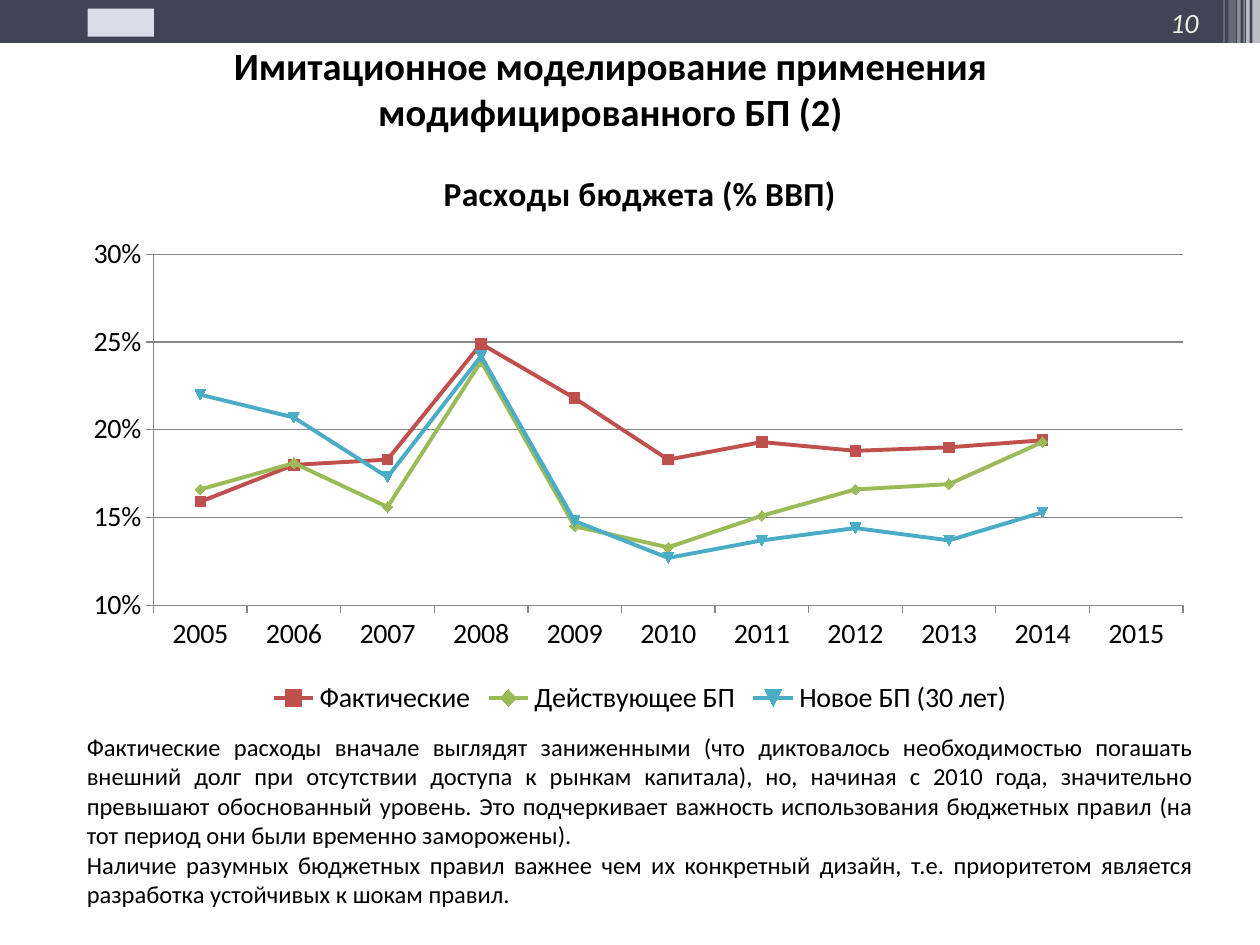
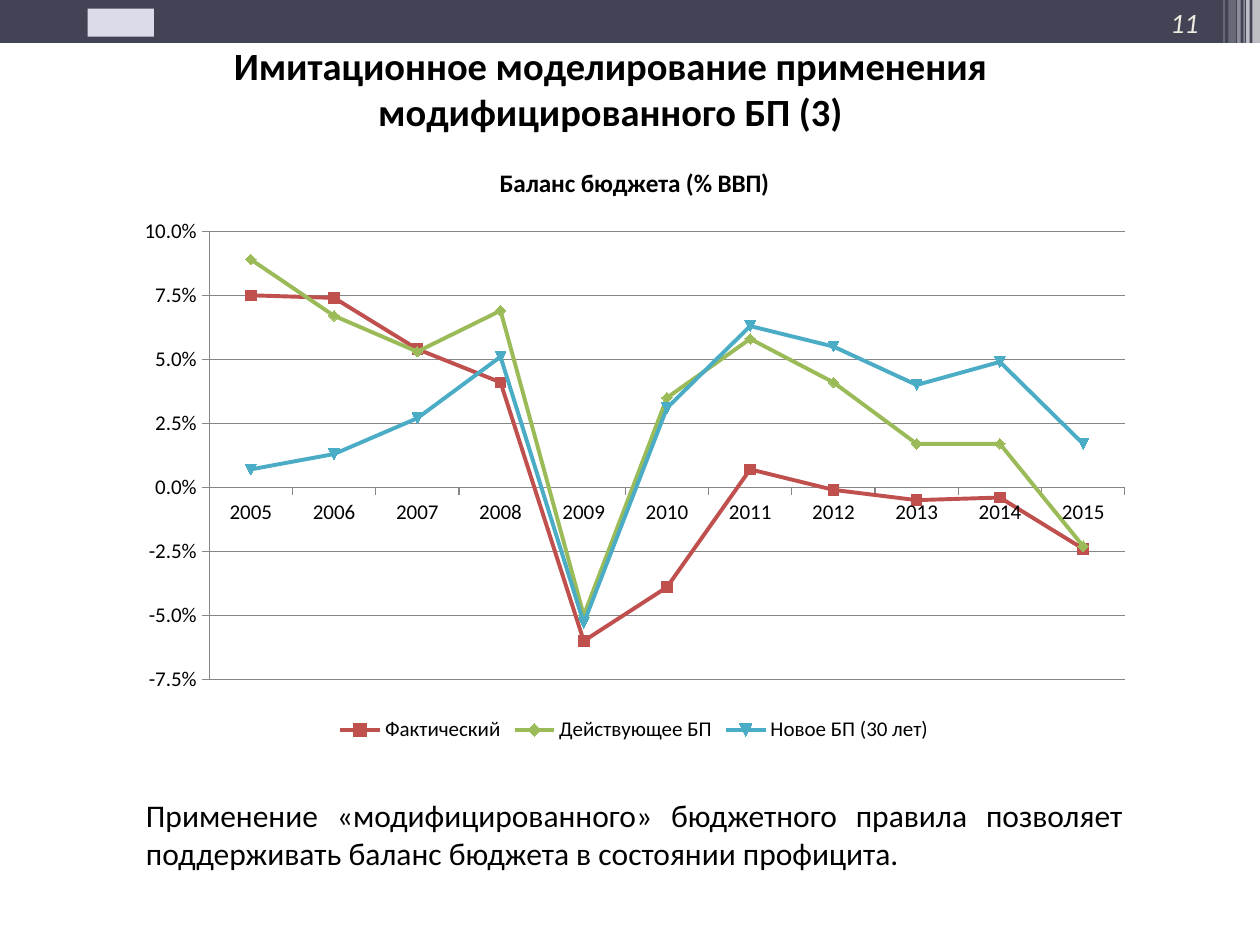
from lxml import etree
from pptx import Presentation
from pptx.chart.data import CategoryChartData
from pptx.dml.color import RGBColor
from pptx.enum import chart as ch, shapes, text
from pptx.oxml import parse_xml
from pptx.oxml.ns import nsdecls, qn
from pptx.util import Pt

# Colours and font
BAND = RGBColor(0x42, 0x44, 0x56)
WHITE = RGBColor(0xFF, 0xFF, 0xFF)
EMBLEM = RGBColor(0xDB, 0xDB, 0xE9)
NUMBER = RGBColor(0xEE, 0xEC, 0xE1)
BLACK = RGBColor(0, 0, 0)
GREY = RGBColor(0x86, 0x86, 0x86)
RED = RGBColor(0xC0, 0x50, 0x4D)
GREEN = RGBColor(0x9B, 0xBB, 0x59)
BLUE = RGBColor(0x4B, 0xAC, 0xC6)
SERIES_COLOURS = (RED, GREEN, BLUE)
FONT = "Calibri"

# Content
TITLE = "Имитационное моделирование применения модифицированного БП ({})"
YEARS = [str(year) for year in range(2005, 2016)]
SLIDES = [
    {
        "number": 10, "part": 2,
        "chart": {
            "title": "Расходы бюджета (% ВВП)", "size": 16,
            "box": (42.5, 82.8, 646.5, 329), "plot": (0.07, 0.19, 0.91, 0.61),
            "scale": (0.1, 0.3, 0.05), "format": "0%",
            "series": {
                "Фактические": (0.159, 0.18, 0.183, 0.249, 0.218, 0.183,
                                0.193, 0.188, 0.19, 0.194, None),
                "Действующее БП": (0.166, 0.181, 0.156, 0.239, 0.145, 0.133,
                                   0.151, 0.166, 0.169, 0.193, None),
                "Новое БП (30 лет)": (0.22, 0.207, 0.173, 0.242, 0.148, 0.127,
                                      0.137, 0.144, 0.137, 0.153, None),
            },
        },
        "text_box": (42.5, 414.7, 646.5, 126), "text_size": 14,
        "text": [
            "Фактические расходы вначале выглядят заниженными (что диктовалось "
            "необходимостью погашать внешний долг при отсутствии доступа к рынкам "
            "капитала), но, начиная с 2010 года, значительно превышают обоснованный "
            "уровень. Это подчеркивает важность использования бюджетных правил (на "
            "тот период они были временно заморожены).",
            "Наличие разумных бюджетных правил важнее чем их конкретный дизайн, т.е. "
            "приоритетом является разработка устойчивых к шокам правил.",
        ],
    },
    {
        "number": 11, "part": 3,
        "chart": {
            "title": "Баланс бюджета (% ВВП)", "size": 12,
            "box": (70.5, 81.4, 584, 345.6), "plot": (0.084, 0.147, 0.896, 0.741),
            "scale": (-0.075, 0.1, 0.025), "format": "0.0%",
            "series": {
                "Фактический": (0.075, 0.074, 0.054, 0.041, -0.06, -0.039,
                                0.007, -0.001, -0.005, -0.004, -0.024),
                "Действующее БП": (0.089, 0.067, 0.053, 0.069, -0.05, 0.035,
                                   0.058, 0.041, 0.017, 0.017, -0.023),
                "Новое БП (30 лет)": (0.007, 0.013, 0.027, 0.051, -0.053, 0.031,
                                      0.063, 0.055, 0.04, 0.049, 0.017),
            },
        },
        "text_box": (76.3, 451.4, 572.4, 51), "text_size": 18,
        "text": ["Применение «модифицированного» бюджетного правила позволяет "
                 "поддерживать баланс бюджета в состоянии профицита."],
    },
]

# Shared frame: left, width, height, opacity in percent
STRIPES = [(715.7, 4.3, 49, 65), (712.1, 2, 49, 65), (710.6, 0.7, 49, 60),
           (707, 2, 49, 40), (702, 4.3, 46, 20), (699.1, 0.7, 46, 30)]
TITLE_BOX = (105.1, 20.2, 487.4, 60.5)
NUMBER_BOX = (524.2, -1.4, 167.8, 28.8)
EMBLEM_BOX = (50, 5, 38, 16)


def points(box):
    return [Pt(value) for value in box]


def add_block(page, box, colour, opacity=100):
    block = page.shapes.add_shape(shapes.MSO_SHAPE.RECTANGLE, *points(box))
    block.shadow.inherit = False
    block.fill.solid()
    block.fill.fore_color.rgb = colour
    block.line.fill.background()
    if opacity < 100:
        fill = block.fill._xPr.find(qn("a:solidFill"))
        etree.SubElement(fill[0], qn("a:alpha"), val=str(opacity * 1000))


def write(shape, lines, size, align, anchor, colour=BLACK, bold=False, italic=False):
    frame = shape.text_frame
    frame.word_wrap = True
    frame.auto_size = text.MSO_AUTO_SIZE.NONE
    frame.vertical_anchor = anchor
    frame.text = "\n".join(lines)
    for para in frame.paragraphs:
        para.alignment = align
        for span in para.runs:
            style_font(span.font, size, colour, bold)
            span.font.italic = italic


def style_font(font, size, colour=BLACK, bold=False):
    font.name, font.size, font.bold = FONT, Pt(size), bold
    font.color.rgb = colour


def add_frame(page, number, part):
    # Band, stripes, emblem, page number and title
    add_block(page, (0, 0, 720, 24.5), BAND)
    for left, width, height, opacity in STRIPES:
        add_block(page, (left, 0, width, height), WHITE, opacity)
    add_block(page, EMBLEM_BOX, EMBLEM)
    middle = text.MSO_ANCHOR.MIDDLE
    number_box = page.shapes.add_textbox(*points(NUMBER_BOX))
    write(number_box, [str(number)], 16, text.PP_ALIGN.RIGHT, middle, NUMBER, italic=True)
    title = page.shapes.title
    title.left, title.top, title.width, title.height = points(TITLE_BOX)
    write(title, [TITLE.format(part)], 22, text.PP_ALIGN.CENTER, middle, bold=True)


def fix_plot(chart, plot):
    # Fixed inner plot area as fractions of the chart
    x, y, width, height = plot
    layout = parse_xml(
        f'<c:layout {nsdecls("c")}><c:manualLayout><c:layoutTarget val="inner"/>'
        f'<c:xMode val="edge"/><c:yMode val="edge"/><c:x val="{x}"/><c:y val="{y}"/>'
        f'<c:w val="{width}"/><c:h val="{height}"/></c:manualLayout></c:layout>')
    area = chart._chartSpace.chart.plotArea
    for old in area.findall(qn("c:layout")):
        area.remove(old)
    area.insert(0, layout)


def add_line_chart(page, title, size, box, plot, scale, format, series):
    data = CategoryChartData(number_format=format)
    data.categories = YEARS
    for name, values in series.items():
        data.add_series(name, values)
    chart = page.shapes.add_chart(ch.XL_CHART_TYPE.LINE_MARKERS, *points(box), data).chart
    style_font(chart.font, size)
    chart.has_title = True
    chart.chart_title.text_frame.text = title
    style_font(chart.chart_title.text_frame.paragraphs[0].runs[0].font, size * 1.2, bold=True)
    chart.chart_title.include_in_layout = False
    chart.has_legend = True
    chart.legend.position = ch.XL_LEGEND_POSITION.BOTTOM
    chart.legend.include_in_layout = False
    fix_plot(chart, plot)

    # Axes
    values_axis = chart.value_axis
    values_axis.minimum_scale, values_axis.maximum_scale, values_axis.major_unit = scale
    values_axis.tick_labels.number_format = format
    values_axis.tick_labels.number_format_is_linked = False
    values_axis.has_major_gridlines = True
    for axis in (values_axis, chart.category_axis):
        axis.major_tick_mark = ch.XL_TICK_MARK.OUTSIDE
        axis.minor_tick_mark = ch.XL_TICK_MARK.NONE
    for item in (values_axis, chart.category_axis, values_axis.major_gridlines):
        item.format.line.color.rgb = GREY
        item.format.line.width = Pt(0.75)

    # Lines and markers
    chart.plots[0].vary_by_categories = False
    for line, colour in zip(chart.plots[0].series, SERIES_COLOURS):
        line.smooth = False
        line.format.line.color.rgb = colour
        line.format.line.width = Pt(2.25)
        line.marker.style = ch.XL_MARKER_STYLE.AUTOMATIC
        line.marker.size = 6
        line.marker.format.fill.solid()
        line.marker.format.fill.fore_color.rgb = colour
        line.marker.format.line.color.rgb = colour


def main():
    deck = Presentation()
    deck.slide_width, deck.slide_height = Pt(720), Pt(540)
    for content in SLIDES:
        page = deck.slides.add_slide(deck.slide_layouts[5])
        add_frame(page, content["number"], content["part"])
        add_line_chart(page, **content["chart"])
        note = page.shapes.add_textbox(*points(content["text_box"]))
        write(note, content["text"], content["text_size"],
              text.PP_ALIGN.JUSTIFY, text.MSO_ANCHOR.TOP)
    deck.save("out.pptx")


if __name__ == "__main__":
    main()
